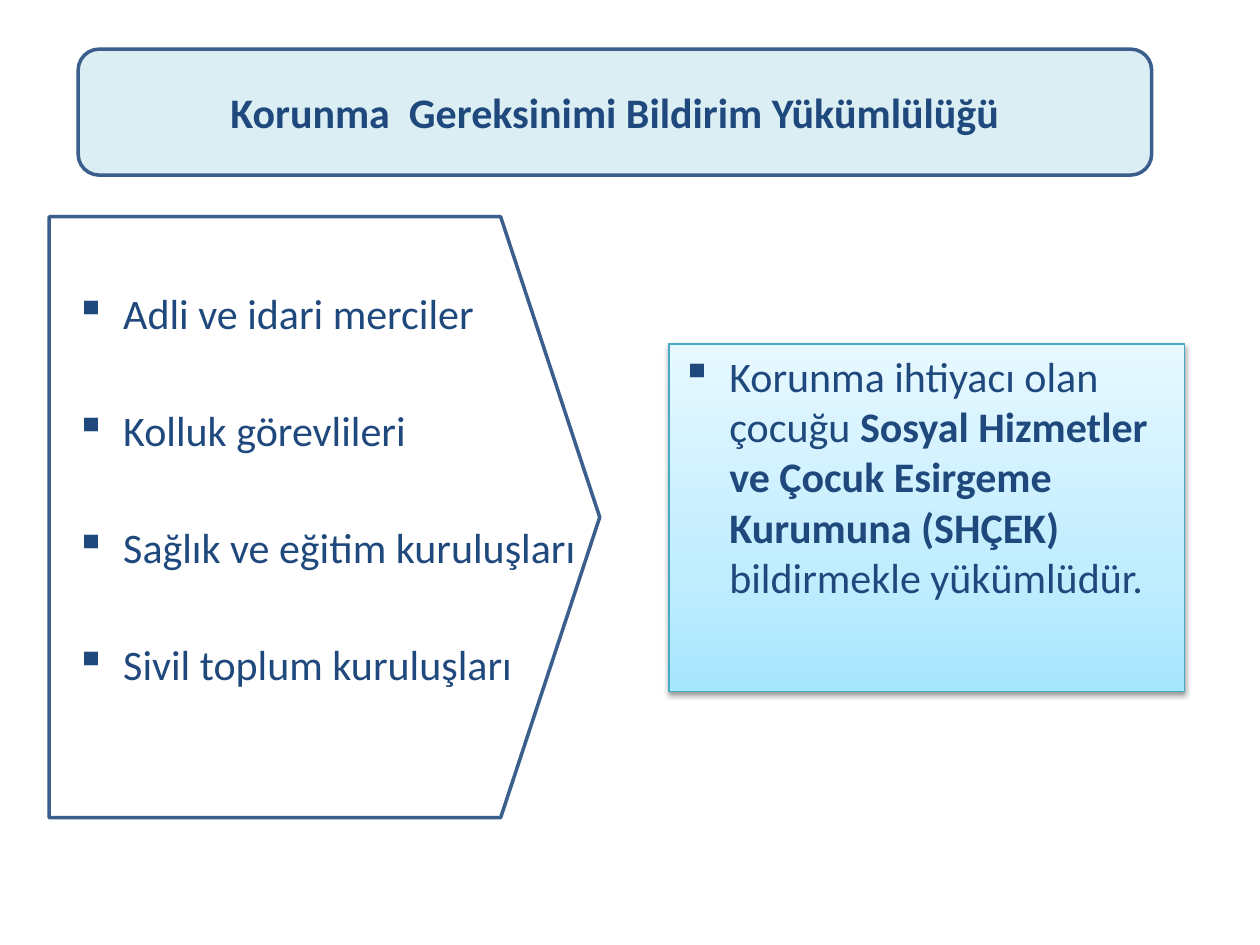
import copy

import lxml.etree
import pptx
import pptx.dml.color
import pptx.enum.shapes
import pptx.enum.text
import pptx.oxml
import pptx.oxml.ns
import pptx.util

Inches = pptx.util.Inches
Pt = pptx.util.Pt
qn = pptx.oxml.ns.qn
KIND = pptx.enum.shapes.MSO_SHAPE
ALIGN = pptx.enum.text.PP_ALIGN
ANCHOR = pptx.enum.text.MSO_ANCHOR

COLORS = {
    "ink": "1F497D",
    "edge": "3A5F8C",
    "pale": "DBEEF4",
    "teal": "46AAC5",
    "low": "A7E6FF",
    "mid": "C1EDFF",
    "high": "E7F8FF",
    "shade": "000000",
}
GROUPS = [
    "Adli ve idari merciler",
    "Kolluk görevlileri",
    "Sağlık ve eğitim kuruluşları",
    "Sivil toplum kuruluşları",
]
DUTY = [
    ("Korunma ihtiyacı olan çocuğu ", False),
    ("Sosyal Hizmetler ve Çocuk Esirgeme Kurumuna (SHÇEK) ", True),
    ("bildirmekle yükümlüdür.", False),
]


def color(name):
    return pptx.dml.color.RGBColor.from_string(COLORS[name])


def apply(target, values):
    for key, value in values.items():
        setattr(target, key, value)


class Page:
    """Holds the text style and the slide being filled."""

    font = {"name": "Calibri", "size": Pt(24)}
    indent = Inches(0.38)

    def __init__(self, slide):
        self.slide = slide

    def shape(self, kind, box, line, width, fill=None, bend=None):
        item = self.slide.shapes.add_shape(kind, *map(Inches, box))
        item.shadow.inherit = False
        if bend is not None:
            item.adjustments[0] = bend
        if fill:
            item.fill.solid()
            item.fill.fore_color.rgb = color(fill)
        else:
            item.fill.background()
        item.line.color.rgb = color(line)
        item.line.width = Pt(width)
        return item

    def blend(self, item, stops):
        """Fill from bottom to top with (position, colour) stops."""
        item.fill.gradient()
        item.fill.gradient_angle = 90
        holder = item._element.spPr.find(".//" + qn("a:gsLst"))
        while len(holder) < len(stops):
            holder.append(copy.deepcopy(holder[0]))
        for stop, (place, name) in zip(item.fill.gradient_stops, stops):
            stop.position = place
            stop.color.rgb = color(name)

    def shadow(self, item):
        effects = item._element.spPr.find(qn("a:effectLst"))
        outer = lxml.etree.SubElement(
            effects, qn("a:outerShdw"), blurRad=str(Pt(3.1)),
            dist=str(Pt(1.6)), dir="5400000", rotWithShape="0")
        tint = lxml.etree.SubElement(
            outer, qn("a:srgbClr"), val=COLORS["shade"])
        lxml.etree.SubElement(tint, qn("a:alpha"), val="38000")

    def box(self, place):
        return self.slide.shapes.add_textbox(*map(Inches, place))

    def text(self, item, paras, align, anchor, bullet=None, gap=0, top=0.05):
        """Write paragraphs, each a list of (words, bold) runs."""
        frame = item.text_frame
        apply(frame, {"word_wrap": True, "vertical_anchor": anchor,
                      "margin_top": Inches(top)})
        for index, runs in enumerate(paras):
            para = frame.add_paragraph() if index else frame.paragraphs[0]
            apply(para, {"alignment": align, "space_after": Pt(gap)})
            if bullet:
                self.bullet(para, bullet)
            for words, bold in runs:
                run = para.add_run()
                run.text = words
                apply(run.font, {**self.font, "bold": bold})
                run.font.color.rgb = color("ink")

    def bullet(self, para, mark):
        props = para._p.get_or_add_pPr()
        props.set("marL", str(self.indent))
        props.set("indent", str(-self.indent))
        lxml.etree.SubElement(props, qn("a:buChar"), char=mark)


def main():
    deck = pptx.Presentation()
    apply(deck, {"slide_width": Inches(10), "slide_height": Inches(7.5)})
    page = Page(deck.slides.add_slide(deck.slide_layouts[6]))

    title = page.shape(KIND.ROUNDED_RECTANGLE, (0.62, 0.39, 8.52, 1),
                       "edge", 2, fill="pale")
    page.text(title, [[("Korunma  Gereksinimi Bildirim Yükümlülüğü", True)]],
              ALIGN.CENTER, ANCHOR.MIDDLE)

    page.shape(KIND.PENTAGON, (0.39, 1.72, 4.37, 4.77), "edge", 2, bend=0.18)
    groups = page.box((0.5, 1.75, 9, 4.95))
    page.text(groups, [[(name, False)] for name in GROUPS],
              ALIGN.LEFT, ANCHOR.TOP, bullet="▪", gap=38, top=0.53)

    duty = page.shape(KIND.RECTANGLE, (5.31, 2.73, 4.09, 2.76), "teal", 0.75)
    page.blend(duty, [(0, "low"), (0.35, "mid"), (1, "high")])
    page.shadow(duty)
    page.text(duty, [DUTY], ALIGN.LEFT, ANCHOR.TOP, bullet="▪")

    deck.save("out.pptx")


if __name__ == "__main__":
    main()
